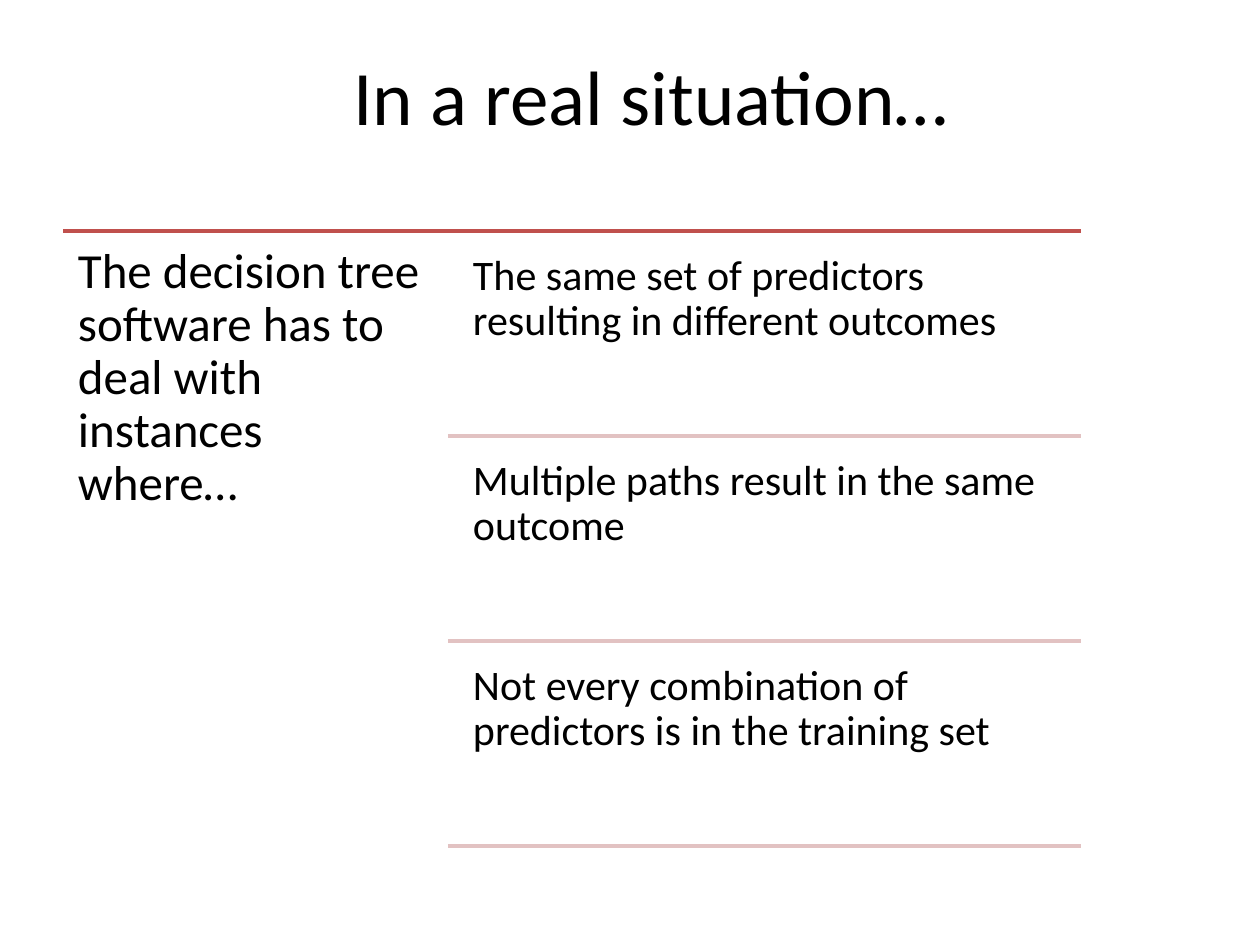
from pptx import Presentation
from pptx import util as u
from pptx.dml.color import RGBColor
from pptx.enum import shapes, text
from pptx.oxml.ns import qn
from lxml import etree

PX_PER_INCH = 126
TOP, ROW_PITCH = 231, 205
LEFT, COLUMN, RIGHT = 63, 448, 1081
CASES = [
    "The same set of predictors resulting in different outcomes",
    "Multiple paths result in the same outcome",
    "Not every combination of predictors is in the training set",
]


def px(length):
    return u.Emu(round(length * u.Inches(1) / PX_PER_INCH))


def colour(hex_value):
    return RGBColor.from_string(hex_value)


def write(frame, wording, size, **paragraph_format):
    """Put one black Calibri paragraph in a text frame."""
    frame.word_wrap = True
    paragraph = frame.paragraphs[0]
    paragraph.text = wording
    for name, value in paragraph_format.items():
        setattr(paragraph, name, value)
    font = paragraph.runs[0].font
    for name, value in {"name": "Calibri", "size": u.Pt(size)}.items():
        setattr(font, name, value)
    font.color.rgb = colour("000000")


def add_title(slide, wording):
    title = slide.shapes.title
    box = {"left": 84, "top": 32, "width": 1134, "height": 126}
    for name, value in box.items():
        setattr(title, name, px(value))
    title.text_frame.vertical_anchor = text.MSO_ANCHOR.MIDDLE
    write(title.text_frame, wording, 44, alignment=text.PP_ALIGN.CENTER)


def add_rule(slide, left, y, hex_value):
    """Draw a horizontal line from left to the right edge of the list."""
    rule = slide.shapes.add_connector(
        shapes.MSO_CONNECTOR.STRAIGHT, px(left), px(y), px(RIGHT), px(y))
    rule.line.color.rgb = colour(hex_value)
    rule.line.width = u.Pt(2)
    etree.SubElement(rule._element.spPr, qn("a:effectLst"))


def add_statement(slide, box, wording, size, inset):
    frame = slide.shapes.add_textbox(*map(px, box)).text_frame
    for side in ("left", "top", "right", "bottom"):
        setattr(frame, f"margin_{side}", px(inset))
    write(frame, wording, size, line_spacing=0.9)


def main():
    deck = Presentation()
    deck.slide_width, deck.slide_height = u.Inches(10), u.Inches(7.5)
    slide = deck.slides.add_slide(deck.slide_layouts[5])
    add_title(slide, "In a real situation…")

    add_rule(slide, LEFT, TOP, "C0504D")
    add_statement(slide, (LEFT, TOP, COLUMN - LEFT, 624),
                  "The decision tree software has to deal with instances where…",
                  28, 15)

    case_left = COLUMN + 12
    for row, case in enumerate(CASES):
        y = TOP + row * ROW_PITCH
        add_statement(slide, (case_left, y + 10, RIGHT - case_left, ROW_PITCH - 10),
                      case, 24, 13)
        add_rule(slide, COLUMN, y + ROW_PITCH, "E2C2C2")

    deck.save("out.pptx")


if __name__ == "__main__":
    main()
